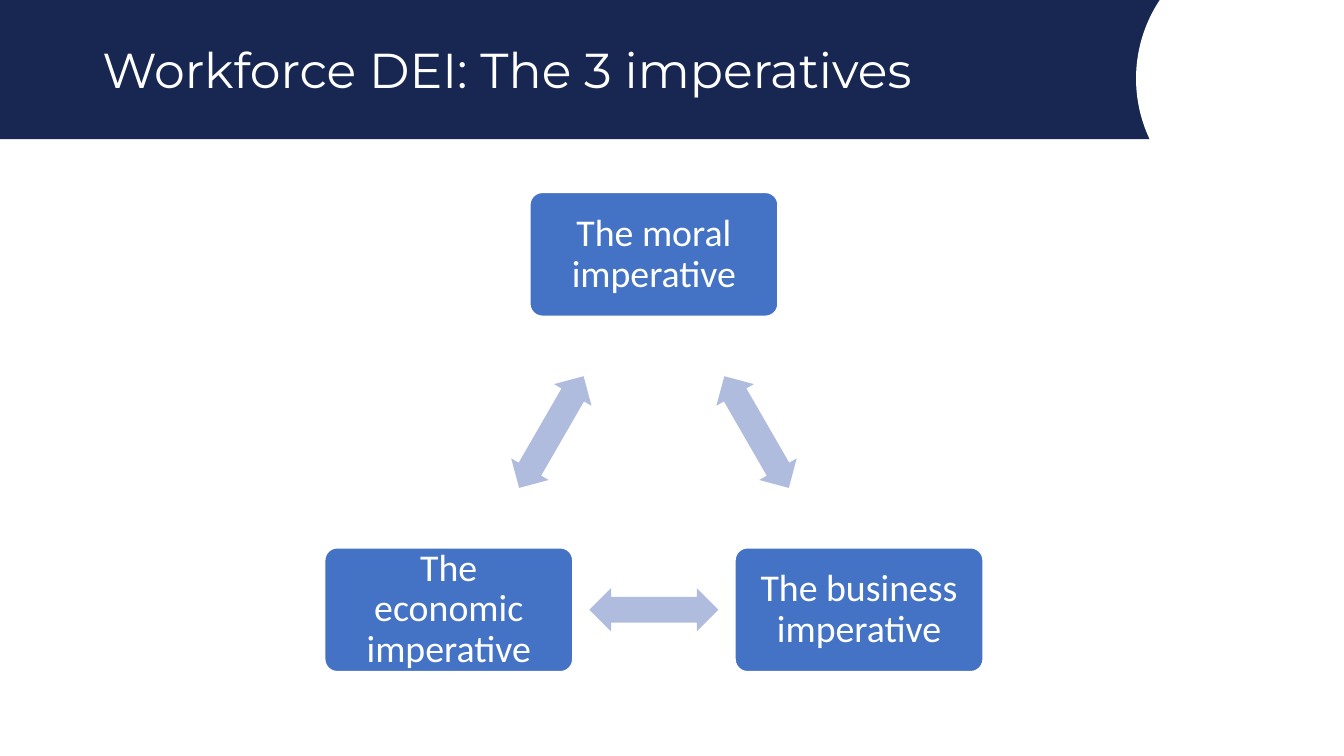
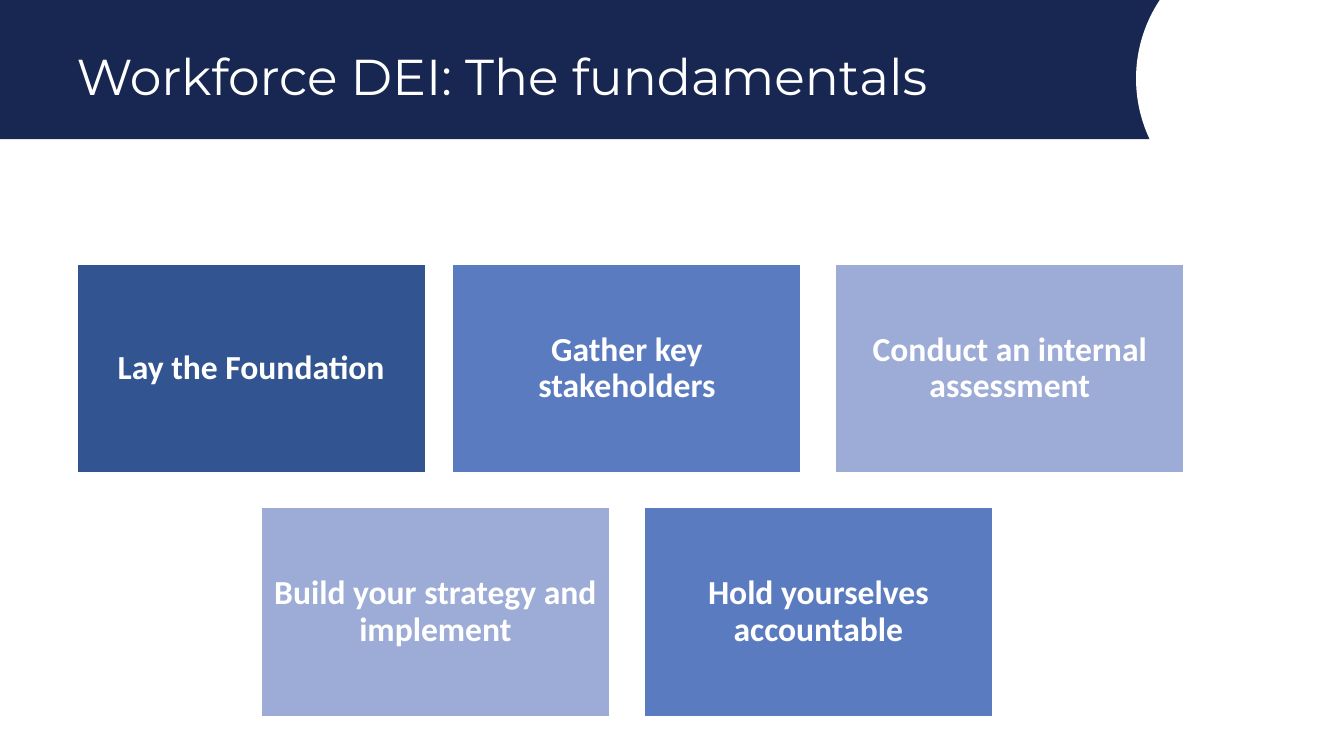
import math
from dataclasses import dataclass

import pptx
import pptx.dml.color
import pptx.enum.shapes
import pptx.enum.text
import pptx.util

Cm = pptx.util.Cm
SHAPES = pptx.enum.shapes.MSO_SHAPE
ANCHOR = pptx.enum.text.MSO_ANCHOR
ALIGN = pptx.enum.text.PP_ALIGN

# Content
IMPERATIVES_TITLE = "Workforce DEI: The 3 imperatives"
IMPERATIVES = ["The moral imperative", "The business imperative", "The economic imperative"]

FUNDAMENTALS_TITLE = "Workforce DEI: The fundamentals"
# Each row holds steps: wording, theme colour, shift to the right in cm
FUNDAMENTALS = [
    [("Lay the Foundation", "deep", 0.18),
     ("Gather key stakeholders", "medium", 0),
     ("Conduct an internal assessment", "pale", 0)],
    [("Build your strategy and implement", "pale", 0),
     ("Hold yourselves accountable", "medium", 0)],
]


@dataclass(frozen=True)
class Theme:
    navy: str = "182752"
    white: str = "FFFFFF"
    blue: str = "4472C4"
    arrow: str = "B0BCDE"
    deep: str = "325491"
    medium: str = "5B7BC0"
    pale: str = "9DACD6"
    title_font: str = "Montserrat"
    body_font: str = "Calibri"
    imperatives_title: int = 35
    fundamentals_title: int = 36
    imperative: int = 27
    step: int = 24


THEME = Theme()

# Layout, in cm
SLIDE_WIDTH, SLIDE_HEIGHT = 33.87, 19.05
BAND_HEIGHT = 3.51
CYCLE_X, CYCLE_Y, CYCLE_RADIUS = 16.48, 12.38, 5.97
IMPERATIVE_WIDTH, IMPERATIVE_HEIGHT = 6.25, 3.12
ARROW_WIDTH, ARROW_HEIGHT = 3.25, 1.09
STEP_WIDTH, STEP_HEIGHT, STEP_GAP = 8.78, 5.27, 0.87
STEPS_CENTRE, STEPS_TOP = 15.8, 6.65


def rgb(value):
    return pptx.dml.color.RGBColor.from_string(value)


def write(shape, text, *, size, font=THEME.body_font, bold=False, align=ALIGN.CENTER,
          anchor=ANCHOR.MIDDLE, spacing=0.9, inset=None):
    frame = shape.text_frame
    frame.word_wrap = True
    frame.vertical_anchor = anchor
    if inset is not None:
        frame.margin_left = frame.margin_right = Cm(inset)
        frame.margin_top = frame.margin_bottom = Cm(inset)
    paragraph = frame.paragraphs[0]
    paragraph.alignment = align
    paragraph.line_spacing = spacing
    run = paragraph.add_run()
    run.text = text
    run.font.name = font
    run.font.size = pptx.util.Pt(size)
    run.font.bold = bold
    run.font.color.rgb = rgb(THEME.white)


def add_figure(slide, kind, left, top, width, height, fill, outlined=False):
    figure = slide.shapes.add_shape(kind, Cm(left), Cm(top), Cm(width), Cm(height))
    figure.shadow.inherit = False
    figure.fill.solid()
    figure.fill.fore_color.rgb = rgb(fill)
    if outlined:
        figure.line.color.rgb = rgb(THEME.white)
        figure.line.width = pptx.util.Pt(1)
    else:
        figure.line.fill.background()
    return figure


def add_title(slide, text, left, top, width, height, **style):
    title = slide.shapes.add_textbox(Cm(left), Cm(top), Cm(width), Cm(height))
    write(title, text, font=THEME.title_font, align=ALIGN.LEFT, **style)


def add_slide(deck):
    """A blank slide with the navy band and its round cut-out."""
    slide = deck.slides.add_slide(deck.slide_layouts[6])
    add_figure(slide, SHAPES.RECTANGLE, 0, 0, SLIDE_WIDTH, BAND_HEIGHT, THEME.navy)
    add_figure(slide, SHAPES.OVAL, 28.63, -1.55, 6.96, 7.06, THEME.white)
    return slide


def cycle_point(angle, radius):
    """Point on the cycle, with the angle clockwise from the top."""
    turn = math.radians(angle)
    return CYCLE_X + radius * math.sin(turn), CYCLE_Y - radius * math.cos(turn)


def build_imperatives(deck):
    slide = add_slide(deck)
    add_title(slide, IMPERATIVES_TITLE, 2.33, 0.46, 29.21, 2.72,
              size=THEME.imperatives_title)
    turn = 360 / len(IMPERATIVES)
    for index, imperative in enumerate(IMPERATIVES):
        # Box on a corner of the triangle
        x, y = cycle_point(index * turn, CYCLE_RADIUS)
        box = add_figure(slide, SHAPES.ROUNDED_RECTANGLE,
                         x - IMPERATIVE_WIDTH / 2, y - IMPERATIVE_HEIGHT / 2,
                         IMPERATIVE_WIDTH, IMPERATIVE_HEIGHT, THEME.blue, outlined=True)
        box.adjustments[0] = 0.1
        write(box, imperative, size=THEME.imperative, inset=0.35)

        # Arrow halfway along the side to the next corner
        angle = (index + 0.5) * turn
        x, y = cycle_point(angle, CYCLE_RADIUS * math.cos(math.radians(turn / 2)))
        arrow = add_figure(slide, SHAPES.LEFT_RIGHT_ARROW,
                           x - ARROW_WIDTH / 2, y - ARROW_HEIGHT / 2,
                           ARROW_WIDTH, ARROW_HEIGHT, THEME.arrow)
        arrow.adjustments[0] = 0.6
        arrow.adjustments[1] = 0.5
        arrow.rotation = angle


def build_fundamentals(deck):
    slide = add_slide(deck)
    # Rows of steps, each centred on the same axis
    for row, steps in enumerate(FUNDAMENTALS):
        row_width = len(steps) * (STEP_WIDTH + STEP_GAP) - STEP_GAP
        row_left = STEPS_CENTRE - row_width / 2
        top = STEPS_TOP + row * (STEP_HEIGHT + STEP_GAP)
        for column, (text, colour, shift) in enumerate(steps):
            left = row_left + column * (STEP_WIDTH + STEP_GAP) + shift
            step = add_figure(slide, SHAPES.RECTANGLE, left, top, STEP_WIDTH, STEP_HEIGHT,
                              getattr(THEME, colour), outlined=True)
            write(step, text, size=THEME.step, bold=True, inset=0.25)
    add_title(slide, FUNDAMENTALS_TITLE, 1.68, 1.02, 27.38, 1.8,
              size=THEME.fundamentals_title, anchor=ANCHOR.TOP, spacing=1.0)


def main():
    deck = pptx.Presentation()
    deck.slide_width, deck.slide_height = Cm(SLIDE_WIDTH), Cm(SLIDE_HEIGHT)
    build_imperatives(deck)
    build_fundamentals(deck)
    deck.save("out.pptx")


if __name__ == "__main__":
    main()
